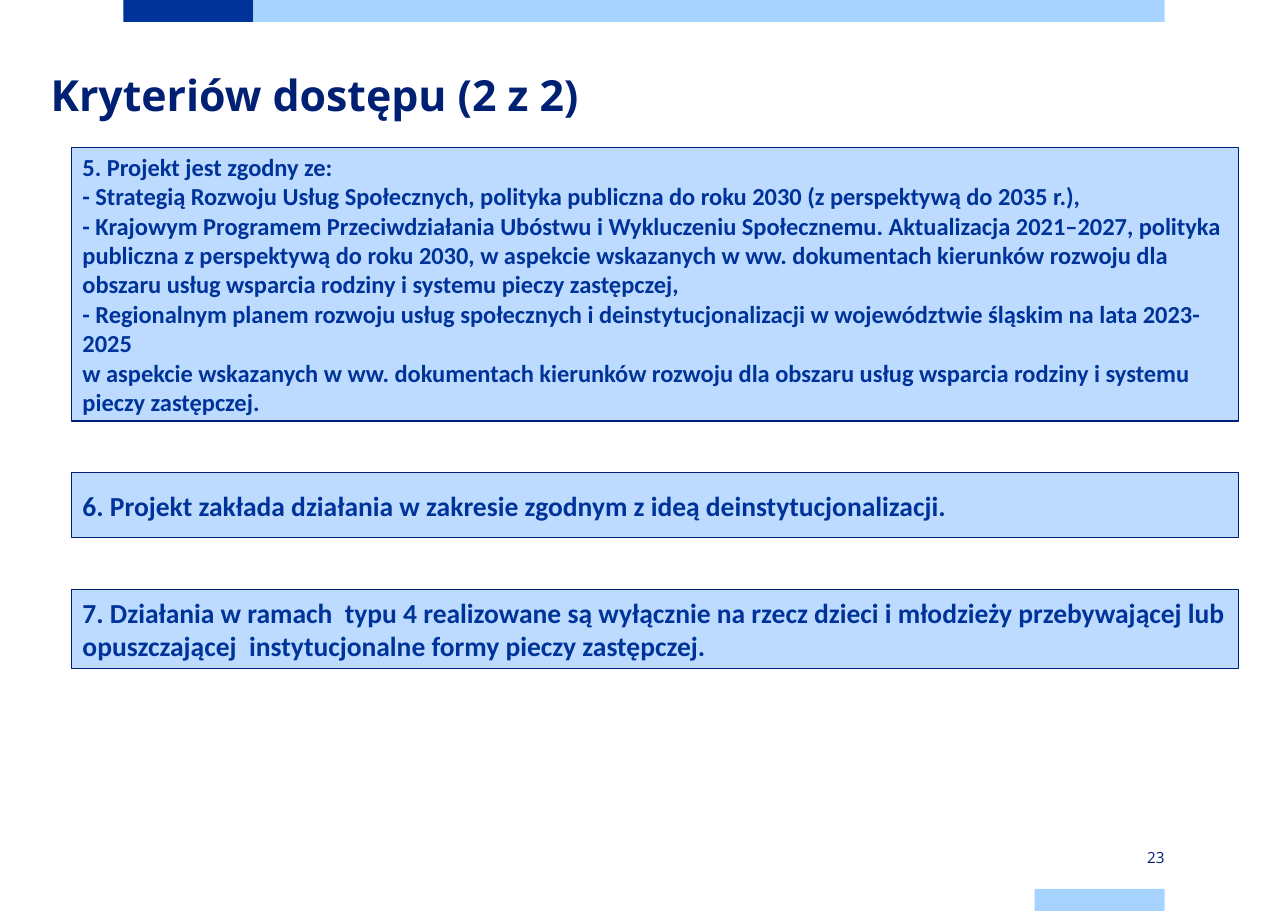
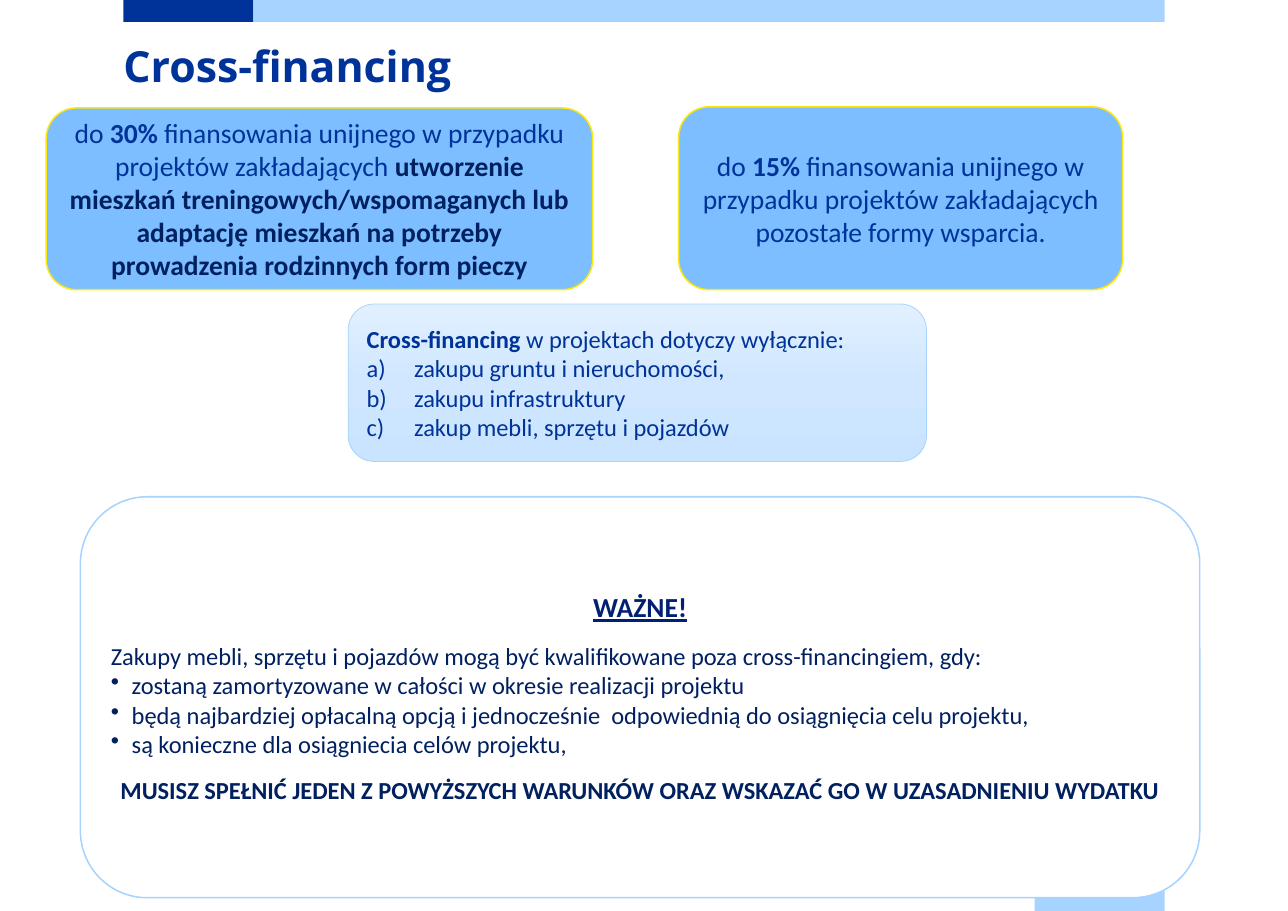
from copy import deepcopy
from dataclasses import dataclass

from pptx import Presentation
from pptx import util as u
from pptx.dml.color import RGBColor
from pptx.enum import shapes, text
from pptx.oxml import ns, xmlchemy

PX = 9144  # EMU: 100 px to the inch

WHITE = RGBColor(0xFF, 0xFF, 0xFF)
BLUE = RGBColor(0x00, 0x33, 0x99)
NAVY = RGBColor(0x00, 0x20, 0x73)
DARK = RGBColor(0x00, 0x20, 0x60)
SKY = RGBColor(0xA6, 0xD3, 0xFF)
PALE = RGBColor(0xBC, 0xDB, 0xFF)
LIMIT_FILL = RGBColor(0x7C, 0xBE, 0xFF)
YELLOW = RGBColor(0xFF, 0xE6, 0x0B)
SCOPE_STOPS = [
    (0, RGBColor(0xE1, 0xF0, 0xFF)),
    (0.5, RGBColor(0xD0, 0xE7, 0xFF)),
    (1, RGBColor(0xCA, 0xE4, 0xFF)),
]

BODY_FONT = "Calibri"
HEAD_FONT = "Open Sans"
LEFT, CENTER, RIGHT = text.PP_ALIGN.LEFT, text.PP_ALIGN.CENTER, text.PP_ALIGN.RIGHT
RECT = shapes.MSO_SHAPE.RECTANGLE
ROUNDED = shapes.MSO_SHAPE.ROUNDED_RECTANGLE

BULLET = ("a:buChar", {"char": "•"}, 19)
LETTER = ("a:buAutoNum", {"type": "alphaLcParenR"}, 43)


@dataclass
class Para:
    """One paragraph; spans are (text, font overrides) pairs."""
    spans: list
    size: int = 16
    color: RGBColor = BLUE
    bold: bool = False
    underline: bool = False
    align: text.PP_ALIGN = LEFT
    font: str = BODY_FONT
    before: int = 0
    marker: tuple = None


def plain(words, **style):
    return Para([(words, {})], **style)


def add_marker(para, marker):
    """Give the paragraph a hanging bullet or letter."""
    tag, attributes, indent = marker
    props = para._p.get_or_add_pPr()
    props.set("marL", str(indent * PX))
    props.set("indent", str(-indent * PX))
    element = xmlchemy.OxmlElement(tag)
    for name, value in attributes.items():
        element.set(name, value)
    props.append(element)


def style_font(font, color=None, bold=None):
    if color is not None:
        font.color.rgb = color
    if bold is not None:
        font.bold = bold


def write(frame, paras):
    for index, item in enumerate(paras):
        para = frame.paragraphs[0] if index == 0 else frame.add_paragraph()
        para.alignment = item.align
        if item.before:
            para.space_before = u.Pt(item.before)
        if item.marker:
            add_marker(para, item.marker)
        para.font.name = item.font
        para.font.size = u.Pt(item.size)
        para.font.underline = item.underline
        style_font(para.font, item.color, item.bold)
        for words, overrides in item.spans:
            span = para.add_run()
            span.text = words
            style_font(span.font, **overrides)


def add_box(page, kind, area, fill, line=None, width=1, paras=()):
    box = page.shapes.add_shape(kind, *(n * PX for n in area))
    box.shadow.inherit = False
    box.fill.solid()
    box.fill.fore_color.rgb = fill
    if line is None:
        box.line.fill.background()
    else:
        box.line.color.rgb = line
        box.line.width = u.Pt(width)
    box.text_frame.vertical_anchor = text.MSO_ANCHOR.MIDDLE
    write(box.text_frame, paras)
    return box


def shade(box, stops):
    """Fill the box from top to bottom with three colour stops."""
    box.fill.gradient()
    box.fill.gradient_angle = 270
    stop_list = box._element.spPr.find(".//" + ns.qn("a:gsLst"))
    stop_list.append(deepcopy(stop_list[-1]))
    for stop, (position, color) in zip(box.fill.gradient_stops, stops):
        stop.position = position
        stop.color.rgb = color


def add_label(page, area, para, anchor=text.MSO_ANCHOR.TOP):
    frame = page.shapes.add_textbox(*(n * PX for n in area)).text_frame
    frame.word_wrap = True
    frame.vertical_anchor = anchor
    frame.margin_left = frame.margin_right = 0
    frame.margin_top = frame.margin_bottom = 0
    write(frame, [para])
    return frame


def add_title(page, left, top, words, color):
    title = plain(words, size=28, color=color, bold=True, font=HEAD_FONT)
    frame = add_label(page, (left, top, 945, 118), title)
    frame.paragraphs[0].line_spacing = u.Pt(36)


def add_page(deck):
    """Add a blank page with the colour bands."""
    page = deck.slides.add_slide(deck.slide_layouts[6])
    add_box(page, RECT, (112, 0, 118, 20), BLUE)
    add_box(page, RECT, (230, 0, 827, 20), SKY)
    add_box(page, RECT, (939, 807, 118, 20), SKY)
    return page


def build_criteria(deck):
    page = add_page(deck)
    add_title(page, 46, 59, "Kryteriów dostępu (2 z 2)", NAVY)
    criteria = [
        (248, 16, [
            "5. Projekt jest zgodny ze:",
            "- Strategią Rozwoju Usług Społecznych, polityka publiczna do roku 2030 "
            "(z perspektywą do 2035 r.),",
            "- Krajowym Programem Przeciwdziałania Ubóstwu i Wykluczeniu Społecznemu. "
            "Aktualizacja 2021–2027, polityka publiczna z perspektywą do roku 2030, "
            "w aspekcie wskazanych w ww. dokumentach kierunków rozwoju dla obszaru "
            "usług wsparcia rodziny i systemu pieczy zastępczej,",
            "- Regionalnym planem rozwoju usług społecznych i deinstytucjonalizacji "
            "w województwie śląskim na lata 2023-2025",
            "w aspekcie wskazanych w ww. dokumentach kierunków rozwoju dla obszaru "
            "usług wsparcia rodziny i systemu pieczy zastępczej.",
        ]),
        (59, 18, [
            "6. Projekt zakłada działania w zakresie zgodnym z ideą "
            "deinstytucjonalizacji.",
        ]),
        (72, 18, [
            "7. Działania w ramach  typu 4 realizowane są wyłącznie na rzecz dzieci "
            "i młodzieży przebywającej lub opuszczającej  instytucjonalne formy "
            "pieczy zastępczej.",
        ]),
    ]
    top, gap = 134, 47
    for height, size, lines in criteria:
        paras = [plain(line, size=size, bold=True) for line in lines]
        add_box(page, RECT, (65, top, 1059, height), PALE, NAVY, paras=paras)
        top += height + gap
    number = plain("23", size=10, color=NAVY, align=RIGHT, font=HEAD_FONT)
    add_label(page, (939, 768, 118, 20), number, text.MSO_ANCHOR.MIDDLE)


def build_financing(deck):
    page = add_page(deck)
    bold, strong = {"bold": True}, {"bold": True, "color": DARK}

    conditions = [
        "zostaną zamortyzowane w całości w okresie realizacji projektu",
        "będą najbardziej opłacalną opcją i jednocześnie  odpowiednią do "
        "osiągnięcia celu projektu,",
        "są konieczne dla osiągniecia celów projektu,",
    ]
    notice = [
        plain("WAŻNE!", size=18, color=NAVY, bold=True, underline=True, align=CENTER),
        plain("Zakupy mebli, sprzętu i pojazdów mogą być kwalifikowane poza "
              "cross-financingiem, gdy:", color=DARK, before=12),
        *(plain(line, color=DARK, marker=BULLET) for line in conditions),
        plain("MUSISZ SPEŁNIĆ JEDEN Z POWYŻSZYCH WARUNKÓW ORAZ WSKAZAĆ GO "
              "W UZASADNIENIU WYDATKU", color=DARK, bold=True, align=CENTER, before=11),
    ]
    add_box(page, ROUNDED, (73, 451, 1016, 364), WHITE, SKY, paras=notice)

    purchases = [
        "zakupu gruntu i nieruchomości,",
        "zakupu infrastruktury",
        "zakup mebli, sprzętu i pojazdów",
    ]
    scope = [
        Para([("Cross-financing", bold), (" w projektach dotyczy wyłącznie:", {})]),
        *(plain(line, marker=LETTER) for line in purchases),
    ]
    scope_box = add_box(page, ROUNDED, (316, 276, 525, 143), PALE, SKY, 0.5, scope)
    shade(scope_box, SCOPE_STOPS)

    limits = [
        ((616, 97, 403, 166), [
            ("do ", {}), ("15% ", bold),
            ("finansowania unijnego w przypadku projektów zakładających "
             "pozostałe formy wsparcia.", {}),
        ]),
        ((42, 98, 496, 165), [
            ("do ", {}), ("30% ", bold),
            ("finansowania unijnego w przypadku projektów zakładających ", {}),
            ("utworzenie mieszkań treningowych/wspomaganych lub adaptację mieszkań "
             "na potrzeby prowadzenia rodzinnych form pieczy", strong),
        ]),
    ]
    for area, spans in limits:
        para = Para(spans, size=18, align=CENTER)
        add_box(page, ROUNDED, area, LIMIT_FILL, YELLOW, paras=[para])
    add_title(page, 112, 33, "Cross-financing", BLUE)


def main():
    deck = Presentation()
    deck.slide_width, deck.slide_height = 1169 * PX, 827 * PX
    build_criteria(deck)
    build_financing(deck)
    deck.save("out.pptx")


if __name__ == "__main__":
    main()
